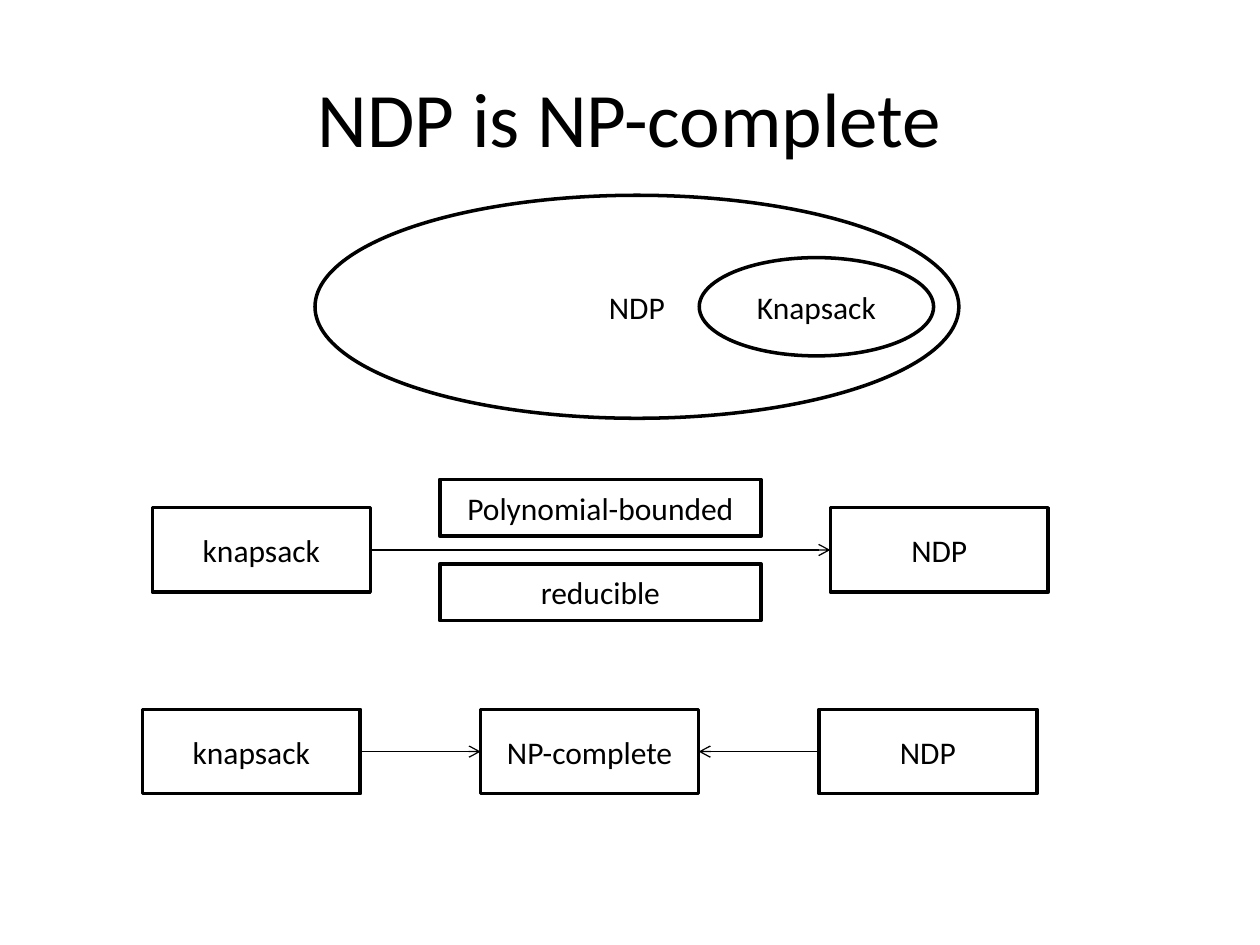
from collections import namedtuple

from lxml.etree import SubElement
from pptx import Presentation
from pptx.dml.color import RGBColor
from pptx.enum.shapes import MSO_CONNECTOR, MSO_SHAPE
from pptx.enum.text import MSO_ANCHOR, PP_ALIGN
from pptx.oxml.ns import qn
from pptx.util import Inches, Pt

Box = namedtuple("Box", "left top width height")
BLACK, WHITE = "000000", "FFFFFF"
LEFT_SIDE, RIGHT_SIDE = 1, 3
NODE_WIDTH, NODE_HEIGHT = 1.73, 0.67
LABEL_WIDTH, LABEL_HEIGHT = 2.55, 0.45


def color(value):
    return RGBColor.from_string(value)


def set_attributes(target, values):
    for name, value in values.items():
        setattr(target, name, value)


def inches(box):
    return [Inches(length) for length in box]


def write_text(shape, text, size):
    frame = shape.text_frame
    set_attributes(frame, {"text": text, "word_wrap": True, "vertical_anchor": MSO_ANCHOR.MIDDLE})
    paragraph = frame.paragraphs[0]
    paragraph.alignment = PP_ALIGN.CENTER
    font = paragraph.runs[0].font
    set_attributes(font, {"name": "Calibri", "size": Pt(size)})
    font.color.rgb = color(BLACK)


def add_node(shapes, box, text, kind=MSO_SHAPE.RECTANGLE, fill=WHITE):
    shape = shapes.add_shape(kind, *inches(box))
    shape.shadow.inherit = False
    if fill:
        shape.fill.solid()
        shape.fill.fore_color.rgb = color(fill)
    else:
        shape.fill.background()
    shape.line.color.rgb = color(BLACK)
    shape.line.width = Pt(2)
    write_text(shape, text, 18)
    return shape


def add_arrow(slide, start, start_side, end, end_side):
    connector = slide.shapes.add_connector(MSO_CONNECTOR.STRAIGHT, 0, 0, 0, 0)
    connector.begin_connect(start, start_side)
    connector.end_connect(end, end_side)
    connector.line.color.rgb = color(BLACK)
    connector.line.width = Pt(0.75)
    SubElement(connector.line._get_or_add_ln(), qn("a:tailEnd"), type="arrow")
    SubElement(connector._element.spPr, qn("a:effectLst"))


def add_title(slide, box, text):
    title = slide.shapes.title
    set_attributes(title, dict(zip(Box._fields, inches(box))))
    write_text(title, text, 44)


def add_node_row(slide, box, texts):
    step = (box.width - NODE_WIDTH) / (len(texts) - 1)
    return [
        add_node(slide.shapes, Box(box.left + index * step, box.top, NODE_WIDTH, box.height), text)
        for index, text in enumerate(texts)
    ]


def add_reduction(slide, box):
    knapsack, ndp = add_node_row(slide, box, ["knapsack", "NDP"])
    add_arrow(slide, knapsack, RIGHT_SIDE, ndp, LEFT_SIDE)
    label_left = box.left + (box.width - LABEL_WIDTH) / 2
    label_top = box.top + (box.height - LABEL_HEIGHT) / 2
    for text, offset in (("Polynomial-bounded", -0.335), ("reducible", 0.335)):
        add_node(slide.shapes, Box(label_left, label_top + offset, LABEL_WIDTH, LABEL_HEIGHT), text)


def add_conclusion(slide, box):
    knapsack, complete, ndp = add_node_row(slide, box, ["knapsack", "NP-complete", "NDP"])
    add_arrow(slide, knapsack, RIGHT_SIDE, complete, LEFT_SIDE)
    add_arrow(slide, ndp, LEFT_SIDE, complete, RIGHT_SIDE)


def add_nested_sets(slide, box):
    group = slide.shapes.add_group_shape()
    width, height, margin = 1.86, 0.78, 0.2
    inner = Box(box.left + box.width - width - margin, box.top + (box.height - height) / 2, width, height)
    for area, text in ((box, "NDP"), (inner, "Knapsack")):
        add_node(group.shapes, area, text, MSO_SHAPE.OVAL, fill=None)


def main():
    presentation = Presentation()
    set_attributes(presentation, {"slide_width": Inches(10), "slide_height": Inches(7.5)})
    slide = presentation.slides.add_slide(presentation.slide_layouts[5])
    add_title(slide, Box(0.5, 0.3, 9, 1.25), "NDP is NP-complete")
    add_reduction(slide, Box(1.21, 4.03, 7.11, NODE_HEIGHT))
    add_conclusion(slide, Box(1.13, 5.63, 7.1, NODE_HEIGHT))
    add_nested_sets(slide, Box(2.5, 1.55, 5.11, 1.77))
    presentation.save("out.pptx")


if __name__ == "__main__":
    main()
